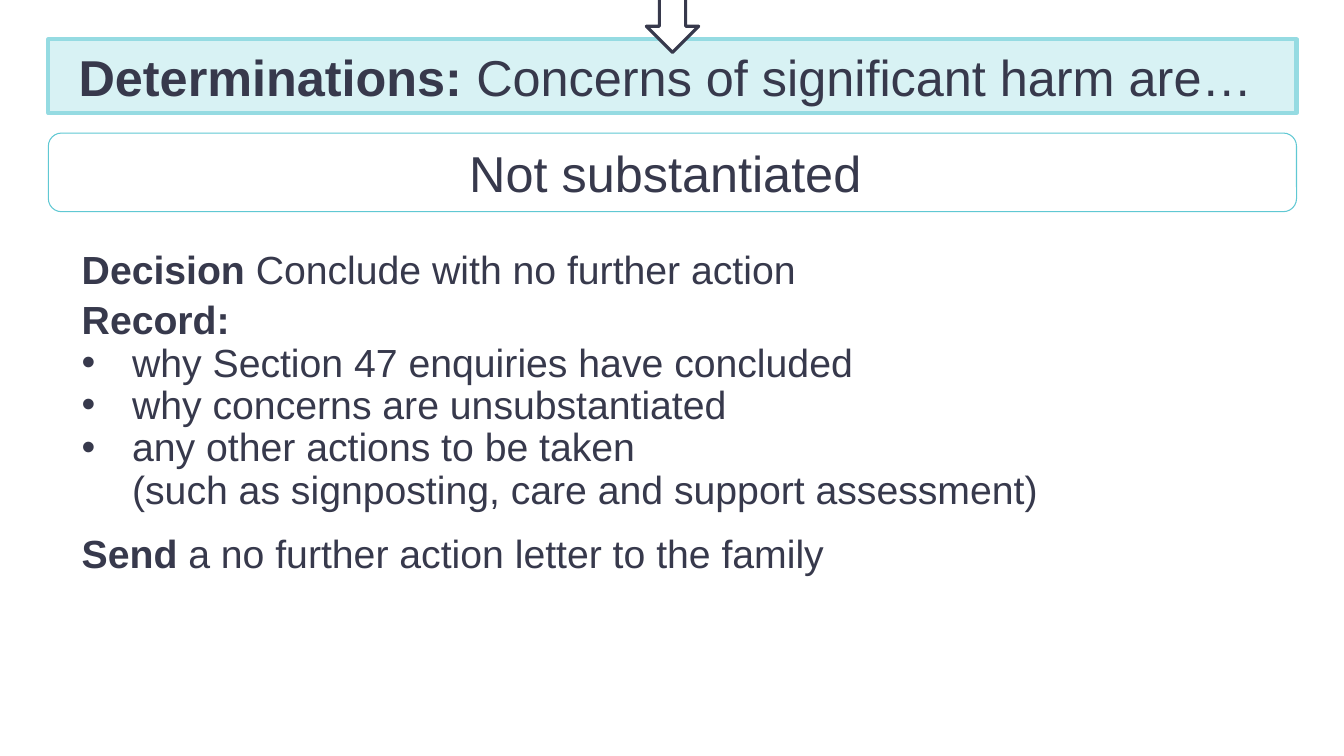
from dataclasses import dataclass
from typing import Any

import lxml.etree
import pptx
import pptx.dml.color
import pptx.enum.shapes
import pptx.enum.text
import pptx.oxml.ns
import pptx.util

COLORS = {
    "ink": "37394C",
    "paper": "FFFFFF",
    "banner": "D8F2F4",
    "banner_edge": "95DBE2",
    "status_edge": "60C8D3",
}
SLIDE_WIDTH = pptx.util.Inches(13.33)
SLIDE_HEIGHT = pptx.util.Inches(7.5)
SHAPES = pptx.enum.shapes.MSO_SHAPE
ALIGN = pptx.enum.text.PP_ALIGN
ANCHOR = pptx.enum.text.MSO_ANCHOR


@dataclass
class Box:
    """Place on the slide, in percent of its width and height."""
    left: float
    top: float
    width: float
    height: float

    def frame(self) -> dict[str, int]:
        return {
            "left": int(SLIDE_WIDTH * self.left / 100),
            "top": int(SLIDE_HEIGHT * self.top / 100),
            "width": int(SLIDE_WIDTH * self.width / 100),
            "height": int(SLIDE_HEIGHT * self.height / 100),
        }


@dataclass
class Line:
    """A paragraph: bold lead, plain rest, and its spacing."""
    lead: str = ""
    rest: str = ""
    bullet: bool = False
    before: float = 0
    after: float = 0
    spacing: float = 1.0


TITLE_BOX = Box(3.6, 5.2, 92.87, 9.73)
STATUS_BOX = Box(3.6, 17.6, 92.87, 10.4)
BODY_BOX = Box(5.33, 23.6, 90.62, 53.33)
ARROW_BOX = Box(48.09, -2.53, 3.9, 9.47)

TITLE = [Line("Determinations:", " Concerns of significant harm are… ")]
STATUS = [Line(rest="Not substantiated ")]
BODY = [
    Line("Decision ", "Conclude with no further action", after=6),
    Line("Record:", spacing=0.9),
    Line(rest="why Section 47 enquiries have concluded ", bullet=True, spacing=0.9),
    Line(rest="why concerns are unsubstantiated", bullet=True, spacing=0.9),
    Line(rest="any other actions to be taken\n(such as signposting, care and support assessment)",
         bullet=True, spacing=0.9),
    Line("Send", " a no further action letter to the family ", before=12),
]


def set_attributes(target: Any, values: dict[str, Any]) -> None:
    for name, value in values.items():
        setattr(target, name, value)


def color(name: str) -> pptx.dml.color.RGBColor:
    return pptx.dml.color.RGBColor.from_string(COLORS[name])


def paint(shape: Any, fill: str, edge: str, weight: float) -> None:
    shape.fill.solid()
    shape.fill.fore_color.rgb = color(fill)
    shape.line.color.rgb = color(edge)
    shape.line.width = pptx.util.Pt(weight)


def set_bullet(paragraph: Any, bullet: bool) -> None:
    properties = paragraph._p.get_or_add_pPr()
    indent = pptx.util.Inches(0.5) if bullet else 0
    properties.set("marL", str(indent))
    properties.set("indent", str(-indent))
    tag = "a:buChar" if bullet else "a:buNone"
    mark = lxml.etree.SubElement(properties, pptx.oxml.ns.qn(tag))
    if bullet:
        mark.set("char", "•")


def add_run(paragraph: Any, text: str, size: float, bold: bool) -> None:
    run = paragraph.add_run()
    run.text = text
    set_attributes(run.font, {"name": "Arial", "size": pptx.util.Pt(size), "bold": bold})
    run.font.color.rgb = color("ink")


def write(shape: Any, lines: list[Line], size: float, align: Any, anchor: Any) -> None:
    frame = shape.text_frame
    set_attributes(frame, {
        "word_wrap": True,
        "auto_size": pptx.enum.text.MSO_AUTO_SIZE.NONE,
        "vertical_anchor": anchor,
    })
    for index, line in enumerate(lines):
        paragraph = frame.add_paragraph() if index else frame.paragraphs[0]
        set_bullet(paragraph, line.bullet)
        set_attributes(paragraph, {
            "alignment": align,
            "line_spacing": line.spacing,
            "space_before": pptx.util.Pt(line.before),
            "space_after": pptx.util.Pt(line.after),
        })
        if line.lead:
            add_run(paragraph, line.lead, size, True)
        if line.rest:
            for part_index, part in enumerate(line.rest.split("\n")):
                if part_index:
                    paragraph.add_line_break()
                add_run(paragraph, part, size, False)


def round_corners(shape: Any, share: int) -> None:
    """Give a placeholder a rounded outline; share is in 1/100000."""
    geometry = lxml.etree.Element(pptx.oxml.ns.qn("a:prstGeom"), prst="roundRect")
    guides = lxml.etree.SubElement(geometry, pptx.oxml.ns.qn("a:avLst"))
    lxml.etree.SubElement(guides, pptx.oxml.ns.qn("a:gd"), name="adj", fmla=f"val {share}")
    shape._element.spPr.find(pptx.oxml.ns.qn("a:xfrm")).addnext(geometry)


def add_box(slide: Any, kind: Any, box: Box, edge: str, weight: float) -> Any:
    shape = slide.shapes.add_shape(kind, **box.frame())
    shape.shadow.inherit = False
    paint(shape, "paper", edge, weight)
    return shape


def main() -> None:
    presentation = pptx.Presentation()
    set_attributes(presentation, {"slide_width": SLIDE_WIDTH, "slide_height": SLIDE_HEIGHT})
    slide = presentation.slides.add_slide(presentation.slide_layouts[1])

    # Title banner
    title = slide.shapes.title
    set_attributes(title, TITLE_BOX.frame())
    round_corners(title, 6800)
    paint(title, "banner", "banner_edge", 3)
    write(title, TITLE, 36, ALIGN.CENTER, ANCHOR.MIDDLE)

    # Decision, record and letter
    body = slide.placeholders[1]
    set_attributes(body, BODY_BOX.frame())
    write(body, BODY, 28, ALIGN.LEFT, ANCHOR.BOTTOM)

    # Outcome and the arrow leading in
    status = add_box(slide, SHAPES.ROUNDED_RECTANGLE, STATUS_BOX, "status_edge", 0.75)
    write(status, STATUS, 36, ALIGN.CENTER, ANCHOR.MIDDLE)
    add_box(slide, SHAPES.DOWN_ARROW, ARROW_BOX, "ink", 2.25)

    presentation.save("out.pptx")


if __name__ == "__main__":
    main()
